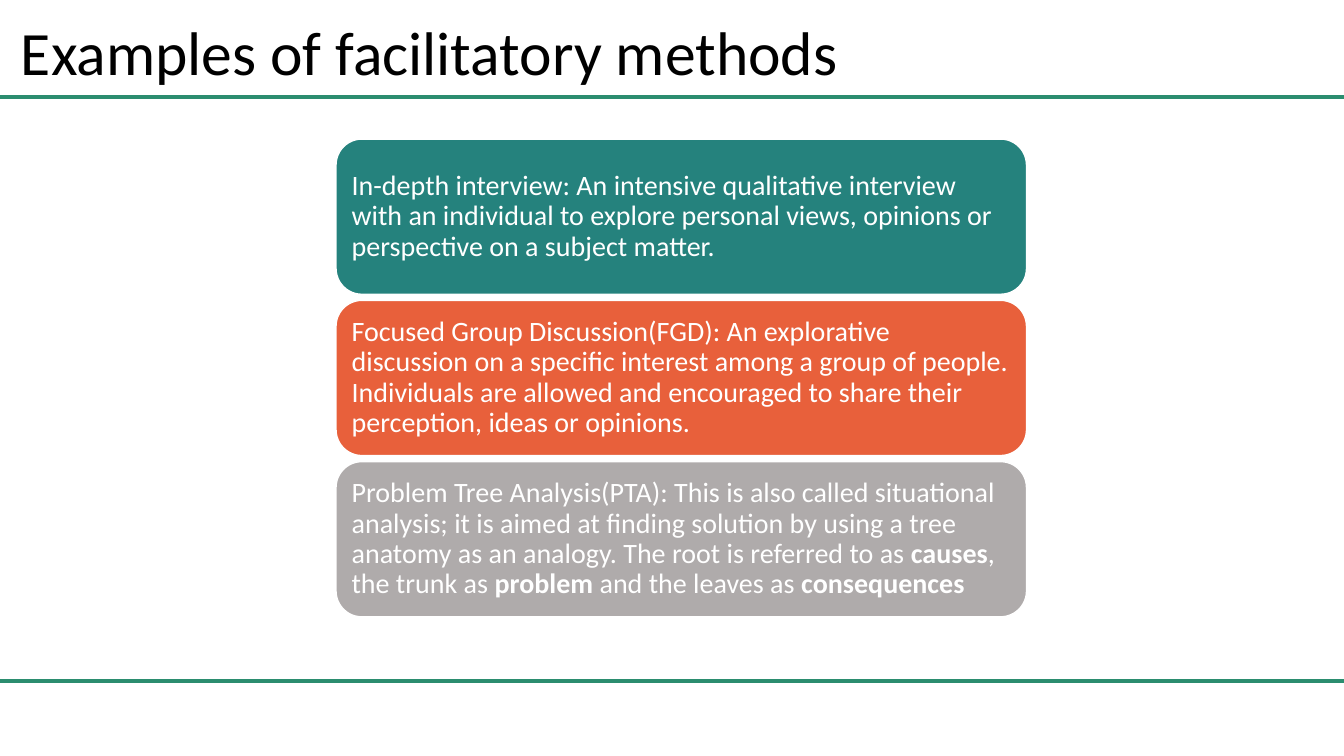
from dataclasses import dataclass

from lxml.etree import SubElement
from pptx import Presentation
from pptx.dml.color import RGBColor
from pptx.enum.shapes import MSO_CONNECTOR, MSO_SHAPE
from pptx.enum.text import MSO_ANCHOR, MSO_AUTO_SIZE, PP_ALIGN
from pptx.oxml.ns import qn
from pptx.util import Inches, Pt


@dataclass(frozen=True)
class Theme:
    font: str = "Calibri"
    title: int = 44
    body: int = 20
    black: str = "000000"
    white: str = "FFFFFF"
    green: str = "2B8D6F"
    teal: str = "25827D"
    coral: str = "E8603B"
    gray: str = "AFABAB"


class Deck:
    """Places elements on a grid of 40 columns by 75 rows."""

    def __init__(self, theme):
        self.theme = theme
        self.file = Presentation()
        self.file.slide_width = Inches(13.33)
        self.file.slide_height = Inches(7.5)
        self.slide = self.file.slides.add_slide(self.file.slide_layouts[6])
        self.shapes = self.slide.shapes

    def col(self, n):
        return round(self.file.slide_width * n / 40)

    def row(self, n):
        return round(self.file.slide_height * n / 75)

    def area(self, left, top, width, height):
        return self.col(left), self.row(top), self.col(width), self.row(height)

    def add_runs(self, para, runs, size, color):
        """Add (text, bold) runs to a paragraph."""
        for text, bold in runs:
            run = para.add_run()
            run.text = text
            run.font.name = self.theme.font
            run.font.size = Pt(size)
            run.font.bold = bold
            run.font.color.rgb = RGBColor.from_string(color)

    def rule(self, row):
        y = self.row(row)
        line = self.shapes.add_connector(
            MSO_CONNECTOR.STRAIGHT, 0, y, self.col(40), y)
        line.line.color.rgb = RGBColor.from_string(self.theme.green)
        line.line.width = Pt(3)
        SubElement(line._element.spPr, qn("a:effectLst"))

    def title(self, text, *area):
        frame = self.shapes.add_textbox(*self.area(*area)).text_frame
        frame.word_wrap = True
        frame.auto_size = MSO_AUTO_SIZE.SHAPE_TO_FIT_TEXT
        self.add_runs(frame.paragraphs[0], [(text, False)],
                      self.theme.title, self.theme.black)

    def card(self, runs, fill, *area):
        card = self.shapes.add_shape(
            MSO_SHAPE.ROUNDED_RECTANGLE, *self.area(*area))
        card.shadow.inherit = False
        card.fill.solid()
        card.fill.fore_color.rgb = RGBColor.from_string(fill)
        card.line.color.rgb = RGBColor.from_string(self.theme.white)
        card.line.width = Pt(1)
        frame = card.text_frame
        frame.word_wrap = True
        frame.vertical_anchor = MSO_ANCHOR.MIDDLE
        frame.margin_left = frame.margin_right = Inches(0.08)
        frame.margin_top = frame.margin_bottom = Inches(0.08)
        para = frame.paragraphs[0]
        para.alignment = PP_ALIGN.LEFT
        para.line_spacing = 0.9
        self.add_runs(para, runs, self.theme.body, self.theme.white)


def main():
    theme = Theme()
    deck = Deck(theme)
    for row in (67.6, 9.6):
        deck.rule(row)

    cards = [
        (theme.teal, [
            ("In-depth interview: An intensive qualitative interview with an "
             "individual to explore personal views, opinions or perspective "
             "on a subject matter.", False)]),
        (theme.coral, [
            ("Focused Group Discussion(FGD): An explorative discussion on a "
             "specific interest among a group of people. Individuals are "
             "allowed and encouraged to share their perception, ideas or "
             "opinions.", False)]),
        (theme.gray, [
            ("Problem Tree Analysis(PTA): This is also called situational "
             "analysis; it is aimed at finding solution by using a tree "
             "anatomy as an analogy. The root is referred to as ", False),
            ("causes", True),
            (", the trunk as ", False),
            ("problem", True),
            (" and the leaves as ", False),
            ("consequences", True)]),
    ]
    for i, (fill, runs) in enumerate(cards):
        deck.card(runs, fill, 10, 13.8 + 16 * i, 20.55, 15.4)

    deck.title("Examples of facilitatory methods", 0.33, 0.9, 27.63, 8.4)
    deck.file.save("out.pptx")


if __name__ == "__main__":
    main()
